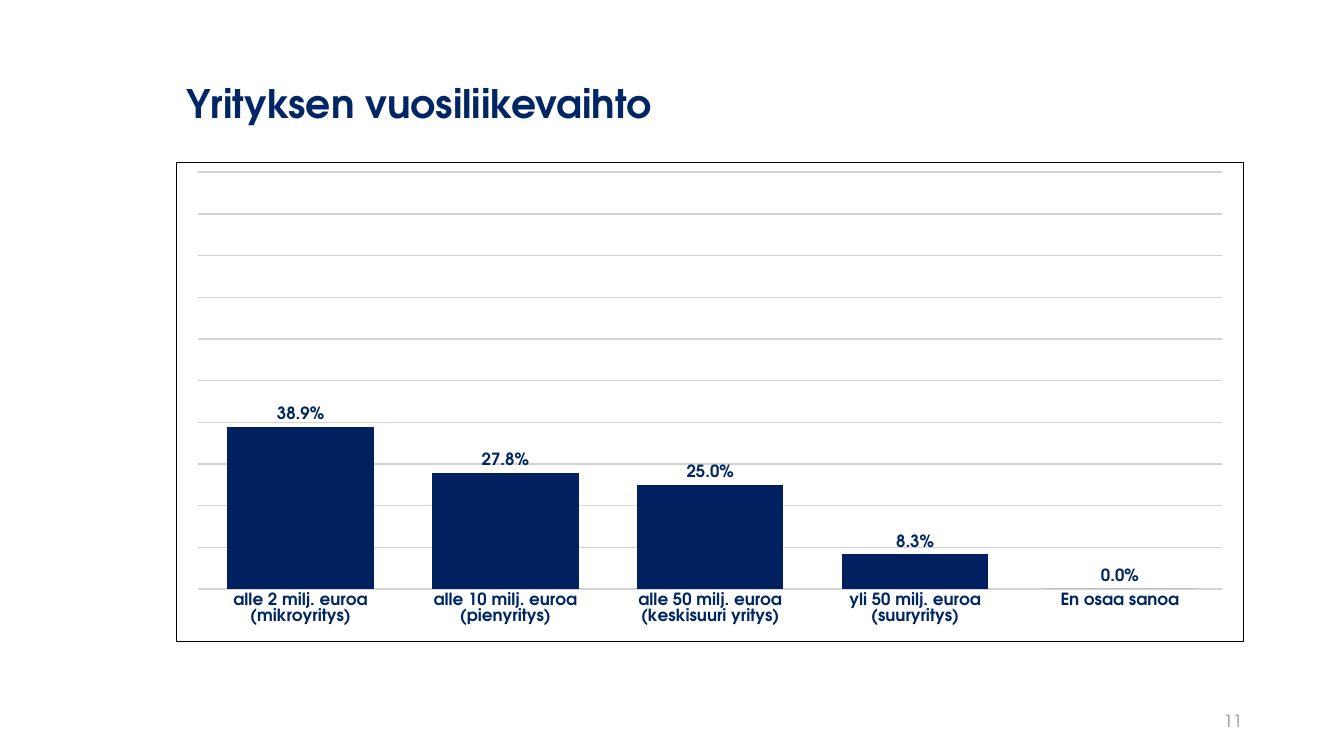
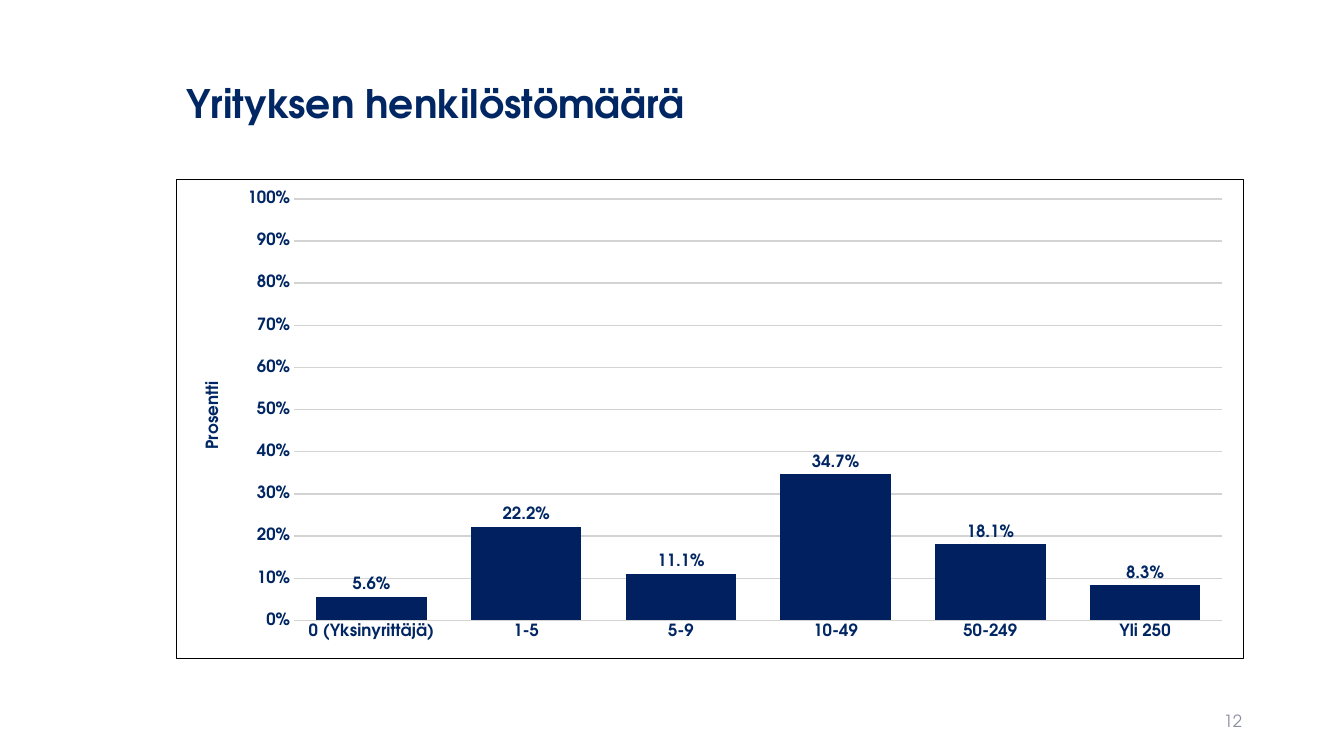
from pptx import Presentation
from pptx.chart.data import CategoryChartData
from pptx.dml.color import RGBColor
from pptx.enum.chart import XL_CHART_TYPE, XL_LABEL_POSITION, XL_TICK_MARK
from pptx.enum.text import MSO_ANCHOR, MSO_AUTO_SIZE, PP_ALIGN
from pptx.oxml import parse_xml
from pptx.oxml.ns import nsdecls, qn
from pptx.util import Pt

COLUMN = XL_CHART_TYPE.COLUMN_CLUSTERED
OUTSIDE = XL_LABEL_POSITION.OUTSIDE_END
NO_TICK = XL_TICK_MARK.NONE
MIDDLE = MSO_ANCHOR.MIDDLE
NO_FIT = MSO_AUTO_SIZE.NONE
LEFT, RIGHT = PP_ALIGN.LEFT, PP_ALIGN.RIGHT

PX = 9144  # 100 px to the inch
FONT = "TeX Gyre Adventor"
NAVY, BAR, GRID, GREY, BLACK = "002663", "002060", "D3D3D3", "8C8E9F", "000000"
TITLE = (175, 40, 1059, 130)
NUMBER = (942, 695, 300, 40)

SLIDES = [
    dict(title="Yrityksen vuosiliikevaihto", number="11",
         box=(175, 161, 1059, 476), plot=(0.02, 0.02, 0.96, 0.87), axis=None,
         data={"alle 2 milj. euroa (mikroyritys)": 0.389,
               "alle 10 milj. euroa (pienyritys)": 0.278,
               "alle 50 milj. euroa (keskisuuri yritys)": 0.25,
               "yli 50 milj. euroa (suuryritys)": 0.083,
               "En osaa sanoa": 0}),
    dict(title="Yrityksen henkilöstömäärä", number="12",
         box=(175, 178, 1059, 476), plot=(0.11, 0.04, 0.87, 0.88),
         axis="Prosentti",
         data={"0 (Yksinyrittäjä)": 0.056, "1-5": 0.222, "5-9": 0.111,
               "10-49": 0.347, "50-249": 0.181, "Yli 250": 0.083}),
]


def rgb(code):
    return RGBColor.from_string(code)


def emu(box):
    return [n * PX for n in box]


def style(font, size=12, color=NAVY, bold=False):
    font.name, font.size, font.bold = FONT, Pt(size), bold
    font.color.rgb = rgb(color)


def write(frame, text, align=None, line=None, **look):
    """Fill a text frame with one formatted paragraph."""
    para = frame.paragraphs[0]
    run = para.add_run()
    run.text = text
    style(run.font, **look)
    if align is not None:
        para.alignment = align
    if line:
        para.line_spacing = line


def hold(frame):
    frame.word_wrap = True
    frame.auto_size = NO_FIT
    frame.vertical_anchor = MIDDLE


def add_title(slide, text, box):
    title = slide.shapes.title
    title.left, title.top, title.width, title.height = emu(box)
    hold(title.text_frame)
    write(title.text_frame, text, align=LEFT, line=0.9, size=28, bold=True)


def add_number(slide, text, box):
    frame = slide.shapes.add_textbox(*emu(box)).text_frame
    hold(frame)
    write(frame, text, align=RIGHT, color=GREY)


def set_frame(chart, plot):
    """Outline the chart and fix its inner plot area, in shares of the chart."""
    root = chart.element.find(qn("c:chart"))
    root.addnext(parse_xml(
        f'<c:spPr {nsdecls("c", "a")}><a:noFill/><a:ln w="6350"><a:solidFill>'
        f'<a:srgbClr val="{BLACK}"/></a:solidFill></a:ln></c:spPr>'))
    area = root.find(qn("c:plotArea"))
    for old in area.findall(qn("c:layout")):
        area.remove(old)
    modes = "".join(f'<c:{k}Mode val="edge"/>' for k in "xy")
    sizes = "".join(f'<c:{k} val="{v}"/>' for k, v in zip("xywh", plot))
    area.insert(0, parse_xml(
        f'<c:layout {nsdecls("c")}><c:manualLayout>'
        f'<c:layoutTarget val="inner"/>{modes}{sizes}'
        f'</c:manualLayout></c:layout>'))


def set_axes(chart, name):
    for axis in (chart.category_axis, chart.value_axis):
        axis.major_tick_mark = axis.minor_tick_mark = NO_TICK
        axis.format.line.fill.background()
    axis = chart.value_axis
    axis.minimum_scale, axis.maximum_scale, axis.major_unit = 0, 1, 0.1
    axis.has_major_gridlines = True
    line = axis.major_gridlines.format.line
    line.color.rgb, line.width = rgb(GRID), Pt(1)
    axis.tick_labels.number_format = "0%"
    axis.tick_labels.number_format_is_linked = False
    axis.visible = bool(name)
    if name:
        title = axis.axis_title
        write(title.text_frame, name, bold=True)
        body = title.element.find(".//" + qn("a:bodyPr"))
        body.set("rot", "-5400000")
        body.set("vert", "horz")


def set_bars(chart):
    plot = chart.plots[0]
    plot.gap_width, plot.overlap, plot.vary_by_categories = 40, -2, False
    fill = plot.series[0].format.fill
    fill.solid()
    fill.fore_color.rgb = rgb(BAR)
    plot.has_data_labels = True
    labels = plot.data_labels
    labels.show_value, labels.position = True, OUTSIDE
    labels.number_format, labels.number_format_is_linked = "0.0%", False
    style(labels.font, bold=True)


def add_bars(slide, box, plot, axis, data):
    feed = CategoryChartData()
    feed.categories = list(data)
    feed.add_series("Series 1", list(data.values()))
    chart = slide.shapes.add_chart(COLUMN, *emu(box), feed).chart
    chart.has_legend = chart.has_title = False
    style(chart.font, bold=True)
    set_frame(chart, plot)
    set_axes(chart, axis)
    set_bars(chart)


def add_slide(deck, title, number, **bars):
    slide = deck.slides.add_slide(deck.slide_layouts[5])
    add_title(slide, title, TITLE)
    add_number(slide, number, NUMBER)
    add_bars(slide, **bars)


def main():
    deck = Presentation()
    deck.slide_width, deck.slide_height = emu((1333, 750))
    for page in SLIDES:
        add_slide(deck, **page)
    deck.save("out.pptx")


if __name__ == "__main__":
    main()
